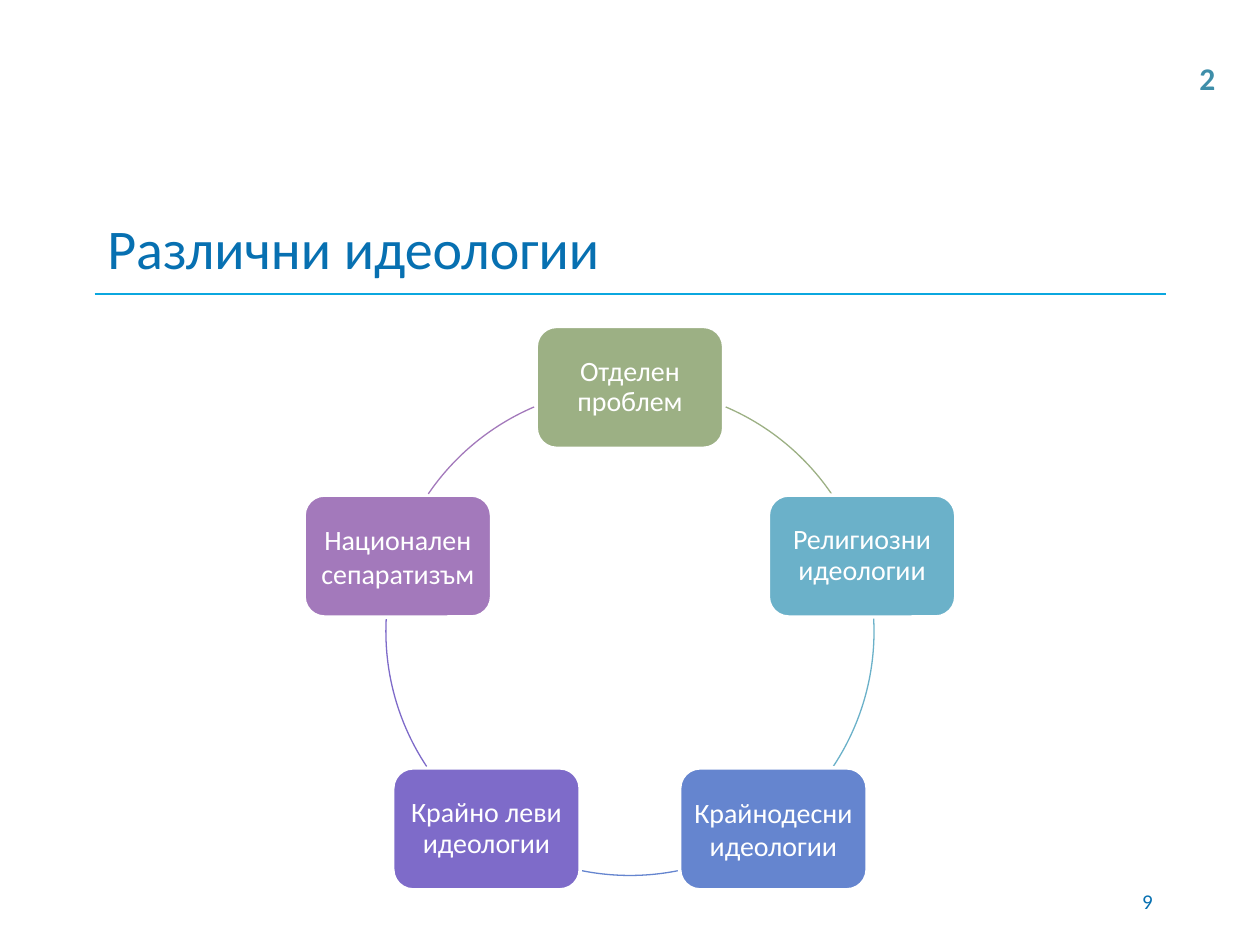
from dataclasses import dataclass
from math import cos, radians, sin

from pptx import Presentation
from pptx.dml.color import RGBColor
from pptx.enum.shapes import MSO_CONNECTOR, MSO_SHAPE
from pptx.enum.text import MSO_ANCHOR, PP_ALIGN
from pptx.oxml.ns import qn
from pptx.util import Cm, Pt


@dataclass(frozen=True)
class Theme:
    font: str = "Calibri"
    title: str = "0770B1"
    rule: str = "0BA7DF"
    corner: str = "3E8EA9"
    white: str = "FFFFFF"
    title_size: int = 32
    node_size: int = 16
    number_size: int = 12
    corner_size: int = 18


THEME = Theme()

# Content: text, colour, line spacing, start and end angle of the arc that follows
TITLE = "Различни идеологии"
PAGE_NUMBER = "9"
CORNER_NUMBER = "2"
IDEOLOGIES = [
    ("Отделен проблем", "9CB084", 0.9, 293.1, 325.7),
    ("Религиозни идеологии", "6BB1C9", 0.9, 357, 33.6),
    ("Крайнодесни идеологии", "6585CF", 1.0, 78.7, 101.3),
    ("Крайно леви идеологии", "7E6BC9", 0.9, 146.4, 183),
    ("Национален сепаратизъм", "A379BB", 1.0, 214.3, 246.9),
]

# Layout, in centimetres
LEFT, RIGHT, RULE_Y, TITLE_Y = 1.91, 23.5, 5.93, 4.04
CENTER_X, CENTER_Y, RADIUS = 12.7, 12.73, 4.92
NODE_WIDTH, NODE_HEIGHT = 3.78, 2.46
ARC_UNITS_PER_DEGREE = 0.6  # 60000 angle units, normalised by 100000


def write(shape, text, size, color, align=PP_ALIGN.LEFT, bold=False,
          anchor=MSO_ANCHOR.MIDDLE, wrap=True, spacing=None, margin=None):
    frame = shape.text_frame
    frame.word_wrap = wrap
    frame.vertical_anchor = anchor
    if margin is not None:
        frame.margin_left = frame.margin_right = Cm(margin)
        frame.margin_top = frame.margin_bottom = Cm(margin)
    para = frame.paragraphs[0]
    para.alignment = align
    if spacing is not None:
        para.line_spacing = spacing
    span = para.add_run()
    span.text = text
    span.font.name = THEME.font
    span.font.size = Pt(size)
    span.font.bold = bold
    span.font.color.rgb = RGBColor.from_string(color)


def outline(shape, color, width):
    shape.line.color.rgb = RGBColor.from_string(color)
    shape.line.width = Pt(width)


def add_header(page):
    rule = page.shapes.add_connector(
        MSO_CONNECTOR.STRAIGHT, Cm(LEFT), Cm(RULE_Y), Cm(RIGHT), Cm(RULE_Y))
    outline(rule, THEME.rule, 1)
    properties = rule._element.spPr
    properties.append(properties.makeelement(qn("a:effectLst"), {}))

    title = page.shapes.title
    title.left, title.top = Cm(LEFT), Cm(TITLE_Y)
    title.width, title.height = Cm(RIGHT - LEFT), Cm(RULE_Y - TITLE_Y)
    write(title, TITLE, THEME.title_size, THEME.title)


def add_cycle(page):
    step = 360 / len(IDEOLOGIES)
    for index, (text, color, spacing, start, end) in enumerate(IDEOLOGIES):
        # Node on the circle, clockwise from the top
        angle = radians(index * step - 90)
        x = CENTER_X + RADIUS * cos(angle)
        y = CENTER_Y + RADIUS * sin(angle)
        node = page.shapes.add_shape(
            MSO_SHAPE.ROUNDED_RECTANGLE,
            Cm(x - NODE_WIDTH / 2), Cm(y - NODE_HEIGHT / 2),
            Cm(NODE_WIDTH), Cm(NODE_HEIGHT))
        node.shadow.inherit = False
        node.fill.solid()
        node.fill.fore_color.rgb = RGBColor.from_string(color)
        outline(node, THEME.white, 2)
        write(node, text, THEME.node_size, THEME.white,
              align=PP_ALIGN.CENTER, spacing=spacing, margin=0.15)

        # Arc to the next node
        arc = page.shapes.add_shape(
            MSO_SHAPE.ARC, Cm(CENTER_X - RADIUS), Cm(CENTER_Y - RADIUS),
            Cm(2 * RADIUS), Cm(2 * RADIUS))
        arc.shadow.inherit = False
        arc.fill.background()
        outline(arc, color, 0.75)
        arc.adjustments[0] = start * ARC_UNITS_PER_DEGREE
        arc.adjustments[1] = end * ARC_UNITS_PER_DEGREE


def add_numbers(page):
    number = page.shapes.add_textbox(Cm(18.21), Cm(17.65), Cm(5.28), Cm(1.02))
    write(number, PAGE_NUMBER, THEME.number_size, THEME.title,
          align=PP_ALIGN.RIGHT)
    corner = page.shapes.add_textbox(Cm(23.93), Cm(1.07), Cm(0.84), Cm(1.02))
    write(corner, CORNER_NUMBER, THEME.corner_size, THEME.corner,
          bold=True, anchor=MSO_ANCHOR.TOP, wrap=False)


def main():
    deck = Presentation()
    deck.slide_width, deck.slide_height = Cm(25.4), Cm(19.05)
    page = deck.slides.add_slide(deck.slide_layouts[5])
    add_header(page)
    add_cycle(page)
    add_numbers(page)
    deck.save("out.pptx")


if __name__ == "__main__":
    main()
